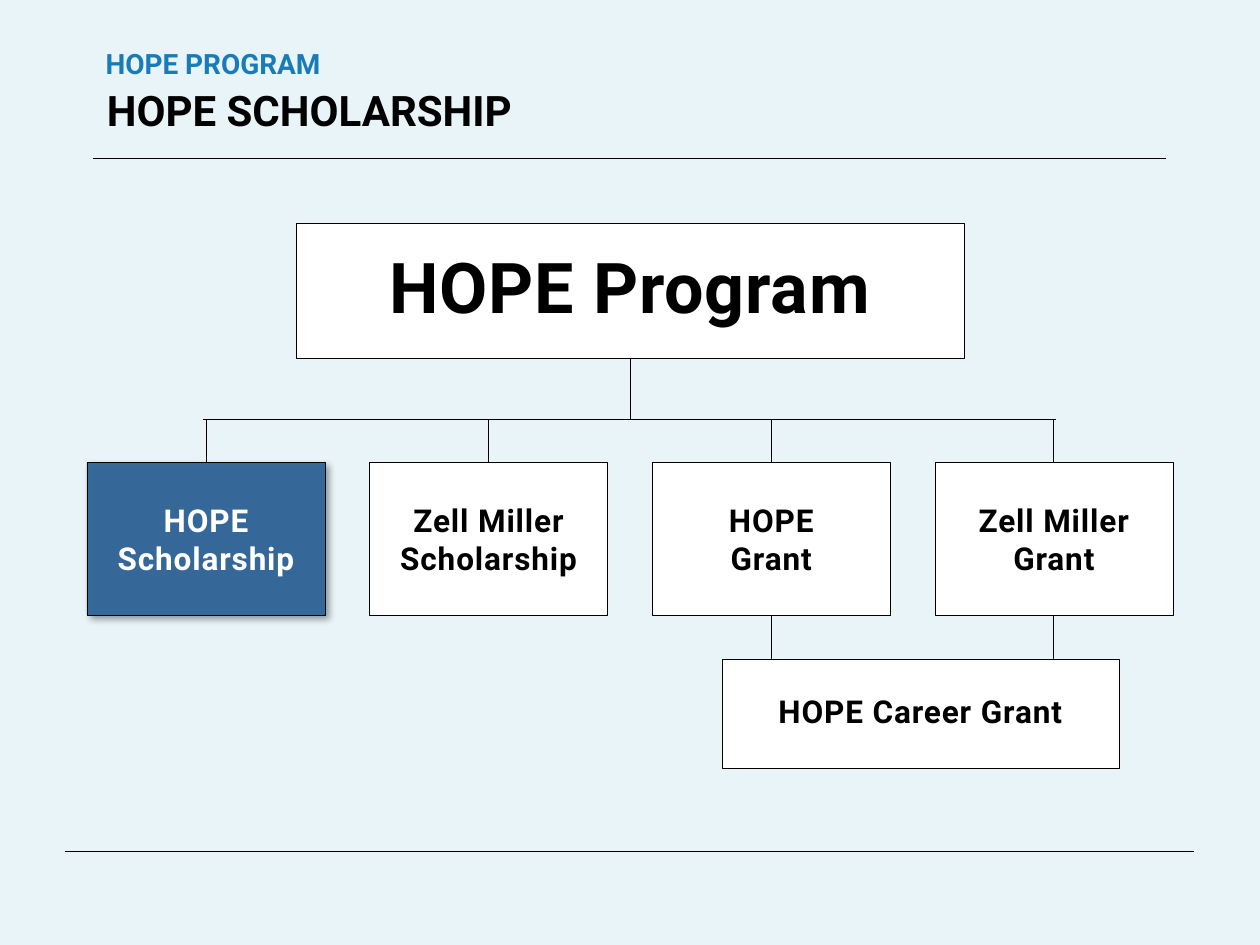
from dataclasses import dataclass

from lxml import etree
from pptx import Presentation
from pptx.dml.color import RGBColor
from pptx.enum.shapes import MSO_CONNECTOR, MSO_SHAPE
from pptx.enum.text import MSO_ANCHOR, PP_ALIGN
from pptx.oxml import parse_xml
from pptx.oxml.ns import nsdecls, qn
from pptx.slide import Slide
from pptx.text.text import TextFrame
from pptx.util import Inches, Pt

STRAIGHT = MSO_CONNECTOR.STRAIGHT
RECTANGLE = MSO_SHAPE.RECTANGLE
MIDDLE = MSO_ANCHOR.MIDDLE
TOP = MSO_ANCHOR.TOP
CENTER = PP_ALIGN.CENTER
LEFT = PP_ALIGN.LEFT

PALE_BLUE = RGBColor(0xE9, 0xF4, 0xF8)
BRIGHT_BLUE = RGBColor(0x18, 0x7C, 0xB8)
DEEP_BLUE = RGBColor(0x33, 0x66, 0x99)
BLACK = RGBColor(0, 0, 0)
WHITE = RGBColor(0xFF, 0xFF, 0xFF)

FONT = "Roboto"
AWARD_LEFT, AWARD_TOP = 0.69, 3.67
AWARD_WIDTH, AWARD_HEIGHT = 1.89, 1.21
AWARD_PITCH = 2.243
BUS_Y = 3.33
CAREER_TOP = 5.23


@dataclass(frozen=True)
class Heading:
    text: str
    left: float
    top: float
    height: float
    size: int
    color: RGBColor


@dataclass(frozen=True)
class Box:
    lines: tuple[str, ...]
    left: float
    top: float
    width: float
    height: float
    size: int = 18
    spacing: float = 1.0
    highlighted: bool = False


@dataclass(frozen=True)
class Rule:
    x1: float
    y1: float
    x2: float
    y2: float


def write_lines(frame: TextFrame, lines: tuple[str, ...], size: int, color: RGBColor,
                align: PP_ALIGN, spacing: float, tracking: int = 0) -> None:
    for index, line in enumerate(lines):
        paragraph = frame.add_paragraph() if index else frame.paragraphs[0]
        paragraph.text = line
        paragraph.alignment = align
        paragraph.line_spacing = spacing
        font = paragraph.font
        font.name = FONT
        font.size = Pt(size)
        font.bold = True
        font.color.rgb = color
        if tracking:
            font._element.set("spc", str(tracking))


def draw_heading(slide: Slide, heading: Heading) -> None:
    frame = slide.shapes.add_textbox(
        Inches(heading.left), Inches(heading.top), Inches(8.5), Inches(heading.height)
    ).text_frame
    frame.word_wrap = True
    frame.vertical_anchor = TOP
    write_lines(frame, (heading.text,), heading.size, heading.color, LEFT, 0.9)


def draw_rule(slide: Slide, rule: Rule) -> None:
    connector = slide.shapes.add_connector(
        STRAIGHT, Inches(rule.x1), Inches(rule.y1), Inches(rule.x2), Inches(rule.y2)
    )
    connector.line.color.rgb = BLACK
    connector.line.width = Pt(0.5)
    etree.SubElement(connector._element.spPr, qn("a:effectLst"))


def highlight(shape) -> None:
    properties = shape._element.spPr
    fill_color = properties.find(qn("a:solidFill")).find(qn("a:srgbClr"))
    etree.SubElement(fill_color, qn("a:alpha"), val="97000")
    properties.find(qn("a:effectLst")).append(parse_xml(
        f'<a:outerShdw {nsdecls("a")} blurRad="{Pt(4)}" dist="{Pt(3)}" dir="2700000" '
        'algn="tl" rotWithShape="0"><a:srgbClr val="000000"><a:alpha val="40000"/>'
        '</a:srgbClr></a:outerShdw>'
    ))


def draw_box(slide: Slide, box: Box) -> None:
    shape = slide.shapes.add_shape(
        RECTANGLE, Inches(box.left), Inches(box.top), Inches(box.width), Inches(box.height)
    )
    shape.shadow.inherit = False
    shape.fill.solid()
    shape.fill.fore_color.rgb = DEEP_BLUE if box.highlighted else WHITE
    shape.line.color.rgb = BLACK
    shape.line.width = Pt(0.25)
    if box.highlighted:
        highlight(shape)
    frame = shape.text_frame
    frame.word_wrap = True
    frame.vertical_anchor = MIDDLE
    frame.margin_left = frame.margin_right = Inches(0.01)
    frame.margin_top = frame.margin_bottom = Inches(0.01)
    text_color = WHITE if box.highlighted else BLACK
    write_lines(frame, box.lines, box.size, text_color, CENTER, box.spacing, tracking=50)


def main() -> None:
    presentation = Presentation()
    presentation.slide_width = Inches(10)
    presentation.slide_height = Inches(7.5)
    slide = presentation.slides.add_slide(presentation.slide_layouts[6])
    slide.background.fill.solid()
    slide.background.fill.fore_color.rgb = PALE_BLUE

    headings = (
        Heading("HOPE SCHOLARSHIP", 0.75, 0.67, 0.73, 24, BLACK),
        Heading("HOPE PROGRAM", 0.74, 0.35, 0.42, 16, BRIGHT_BLUE),
    )
    award_names = (
        ("HOPE", "Scholarship"),
        ("Zell Miller", "Scholarship"),
        ("HOPE", "Grant"),
        ("Zell Miller", "Grant"),
    )
    awards = [
        Box(name, AWARD_LEFT + index * AWARD_PITCH, AWARD_TOP, AWARD_WIDTH, AWARD_HEIGHT,
            highlighted=index == 0)
        for index, name in enumerate(award_names)
    ]
    program = Box(("HOPE Program",), 2.35, 1.77, 5.3, 1.07, size=40, spacing=0.9)
    career_grant = Box(("HOPE Career Grant",), 5.73, CAREER_TOP, 3.15, 0.87, spacing=0.9)

    centers = [award.left + AWARD_WIDTH / 2 for award in awards]
    award_bottom = AWARD_TOP + AWARD_HEIGHT
    rules = [
        Rule(0.52, 6.76, 9.48, 6.76),
        Rule(0.74, 1.26, 9.25, 1.26),
        Rule(5, program.top + program.height, 5, BUS_Y),
        Rule(1.61, BUS_Y, 8.38, BUS_Y),
    ]
    rules += [Rule(x, BUS_Y, x, AWARD_TOP) for x in centers]
    rules += [Rule(x, award_bottom, x, CAREER_TOP) for x in centers[2:]]

    for heading in headings:
        draw_heading(slide, heading)
    for rule in rules:
        draw_rule(slide, rule)
    for box in (program, career_grant, *awards):
        draw_box(slide, box)

    presentation.save("out.pptx")


if __name__ == "__main__":
    main()
